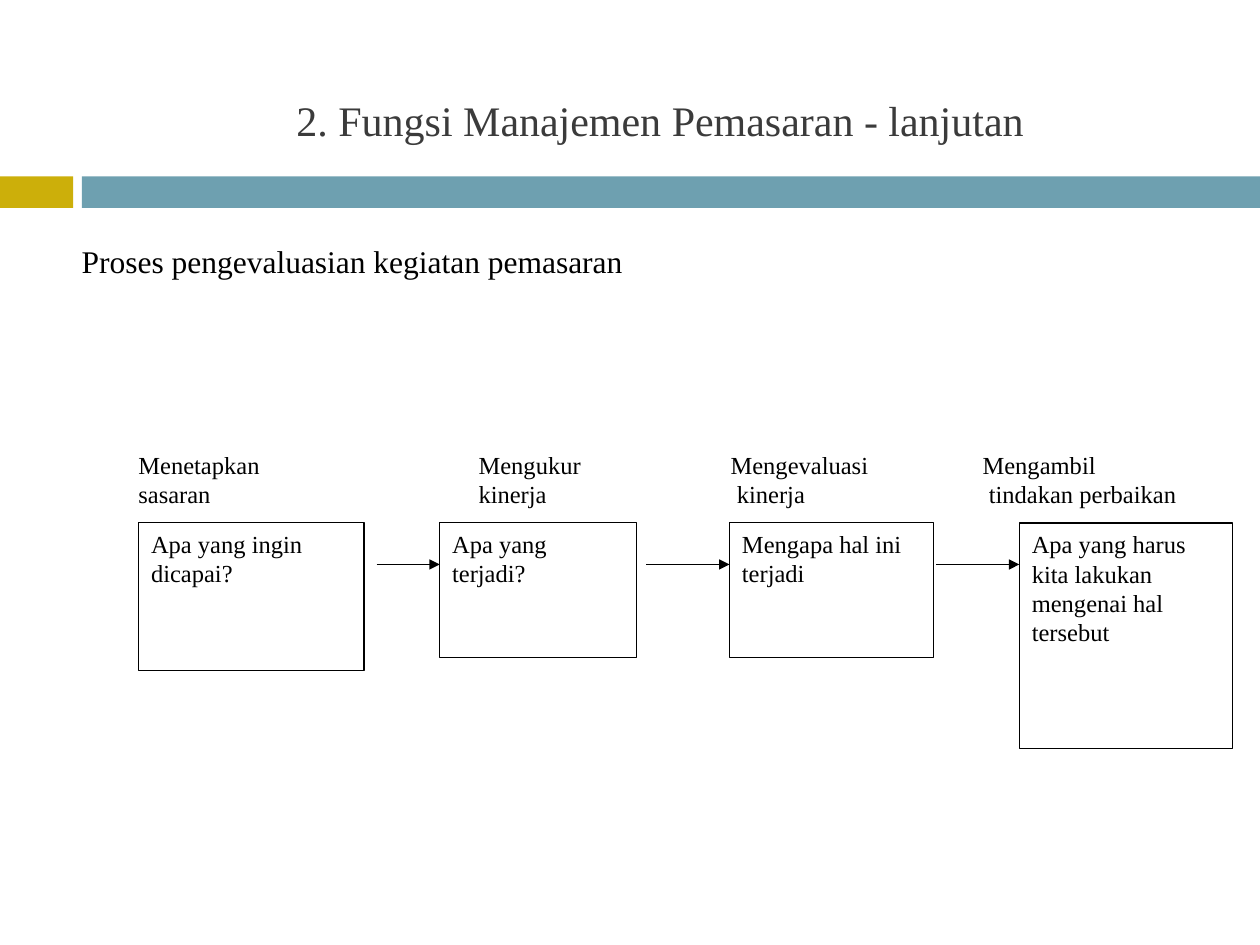
from lxml import etree
from pptx import Presentation, util as u
from pptx.dml.color import RGBColor
from pptx.enum import shapes, text
from pptx.oxml.ns import qn

THEME = {
    "font": "Times New Roman",
    "black": RGBColor(0, 0, 0),
    "white": RGBColor(255, 255, 255),
    "heading": RGBColor(0x3B, 0x3B, 0x3B),
    "gold": RGBColor(0xCC, 0xAF, 0x0A),
    "teal": RGBColor(0x6E, 0xA0, 0xB0),
    "title_size": 24,
    "subtitle_size": 18,
    "body_size": 14,
    "line_width": 0.75,
}

presentation = Presentation()
presentation.slide_width, presentation.slide_height = u.Inches(10), u.Inches(7.5)
slide = presentation.slides.add_slide(presentation.slide_layouts[6])
COLUMN = presentation.slide_width / 100
ROW = presentation.slide_height / 75


def grid(left, top, width, height):
    return [round(n * unit) for n, unit in zip((left, top, width, height), (COLUMN, ROW) * 2)]


def write(shape, content, size=THEME["body_size"], color=THEME["black"],
          align=text.PP_ALIGN.LEFT, anchor=text.MSO_ANCHOR.TOP):
    frame = shape.text_frame
    frame.word_wrap = True
    frame.vertical_anchor = anchor
    frame.text = content
    for paragraph in frame.paragraphs:
        paragraph.alignment = align
        for run in paragraph.runs:
            run.font.name = THEME["font"]
            run.font.size = u.Pt(size)
            run.font.color.rgb = color


for left, width, color in ((0, 5.8, "gold"), (6.5, 93.5, "teal")):
    band = slide.shapes.add_shape(shapes.MSO_SHAPE.RECTANGLE, *grid(left, 14, width, 2.5))
    band.shadow.inherit = False
    band.fill.solid()
    band.fill.fore_color.rgb = THEME[color]
    band.line.fill.background()

step_labels = slide.shapes.add_textbox(*grid(7, 35.2, 88.3, 8.1))
write(step_labels, "\tMenetapkan\tMengukur\tMengevaluasi\tMengambil\n"
                   "\tsasaran\tkinerja\tkinerja\ttindakan perbaikan")
tab_columns = ((3, 30, 50, 70), (3, 30, 50.5, 70.5))
for paragraph, stops in zip(step_labels.text_frame.paragraphs, tab_columns):
    tab_list = etree.SubElement(paragraph._p.get_or_add_pPr(), qn("a:tabLst"))
    for stop in stops:
        etree.SubElement(tab_list, qn("a:tab"), pos=str(round(stop * COLUMN)), algn="l")

steps = (
    (11, 17.9, 11.7, "Apa yang ingin dicapai?"),
    (34.9, 15.6, 10.7, "Apa yang terjadi?"),
    (57.9, 16.2, 10.7, "Mengapa hal ini terjadi"),
    (80.9, 16.9, 17.9, "Apa yang harus kita lakukan mengenai hal tersebut"),
)
for left, width, height, question in steps:
    box = slide.shapes.add_shape(shapes.MSO_SHAPE.RECTANGLE, *grid(left, 41.5, width, height))
    box.shadow.inherit = False
    box.fill.solid()
    box.fill.fore_color.rgb = THEME["white"]
    box.line.color.rgb = THEME["black"]
    box.line.width = u.Pt(THEME["line_width"])
    write(box, question)

for start, (end, *_) in zip((29.9, 51.3, 74.3), steps[1:]):
    arrow = slide.shapes.add_connector(shapes.MSO_CONNECTOR.STRAIGHT, *grid(start, 44.8, end, 44.8))
    arrow.line.color.rgb = THEME["black"]
    arrow.line.width = u.Pt(THEME["line_width"])
    etree.SubElement(arrow.line._get_or_add_ln(), qn("a:tailEnd"), type="triangle")
    etree.SubElement(arrow._element.spPr, qn("a:effectLst"))

title = slide.shapes.add_textbox(*grid(7.8, 7, 89.2, 5))
write(title, "2. Fungsi Manajemen Pemasaran - lanjutan", size=THEME["title_size"],
      color=THEME["heading"], align=text.PP_ALIGN.CENTER, anchor=text.MSO_ANCHOR.MIDDLE)
subtitle = slide.shapes.add_textbox(*grid(5.5, 18.7, 67.2, 4))
write(subtitle, "Proses pengevaluasian kegiatan pemasaran", size=THEME["subtitle_size"])

presentation.save("out.pptx")
